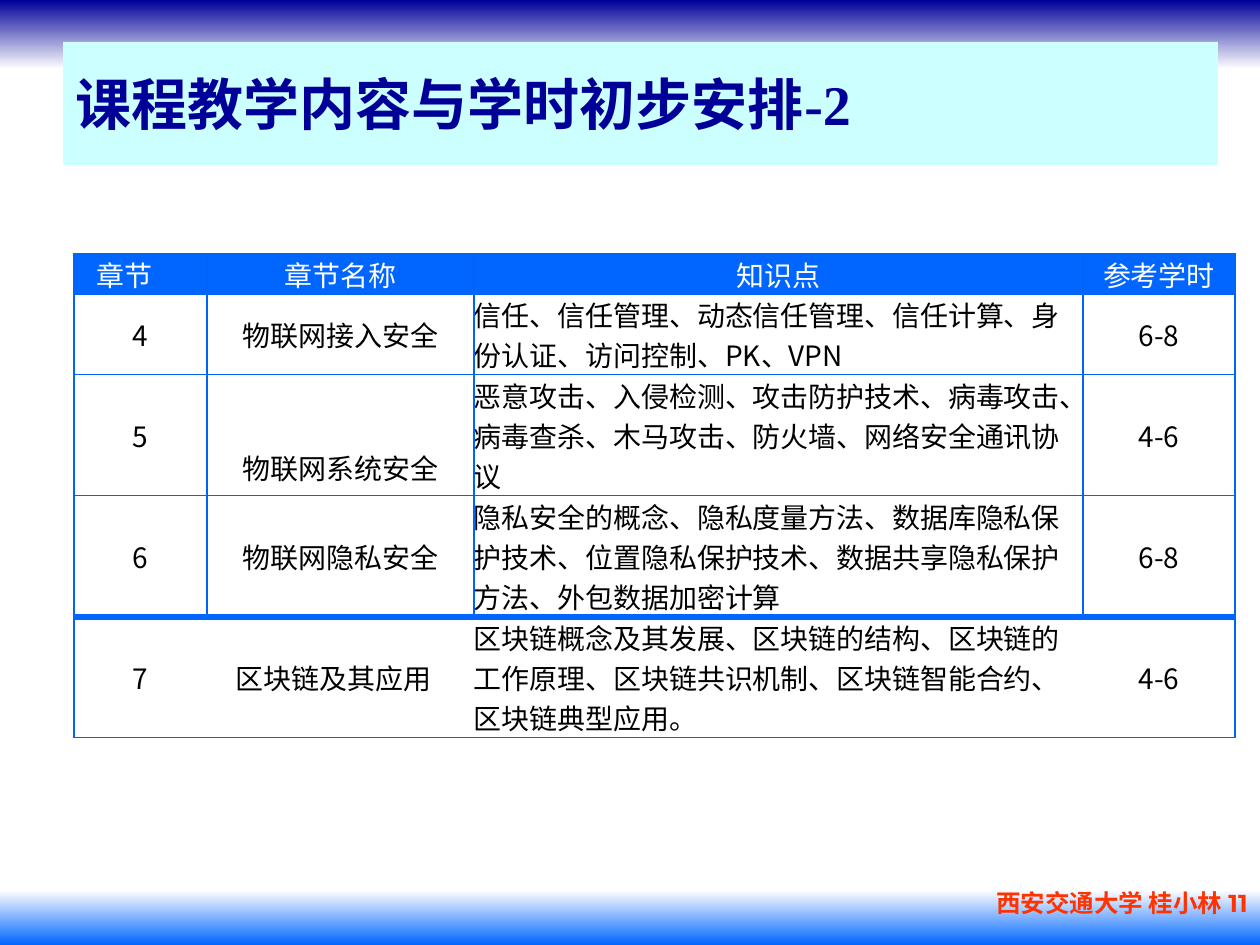
"""Build the course outline slide: title, chapter table and footer."""
from dataclasses import dataclass
from typing import NamedTuple

from lxml.etree import SubElement
from pptx import Presentation
from pptx.dml.color import RGBColor
from pptx.enum.shapes import MSO_SHAPE as Shape
from pptx.enum.text import MSO_ANCHOR as Anchor, PP_ALIGN as Align
from pptx.oxml.ns import qn
from pptx.util import Emu, Pt


@dataclass(frozen=True)
class Theme:
    navy: str = "000099"
    blue: str = "0066FF"
    rule: str = "0064F9"
    pale: str = "CCFFFF"
    white: str = "FFFFFF"
    black: str = "000000"
    orange: str = "FF3300"
    serif: str = "Times New Roman"
    sans: str = "Noto Sans CJK SC"
    footer_font: str = "Montserrat"
    title_size: int = 32
    cell_size: int = 16
    footer_size: int = 14
    thin: float = 0.75
    thick: float = 4


class Box(NamedTuple):
    x: int
    y: int
    w: int
    h: int


class Band(NamedTuple):
    box: Box
    start: str
    end: str


class Chapter(NamedTuple):
    number: str
    name: str
    topics: str
    hours: str


T = Theme()
BANDS = [
    Band(Box(0, 0, 1260, 69), T.navy, T.white),
    Band(Box(0, 890, 1260, 55), T.white, T.blue),
]
TITLE = Box(63, 42, 1155, 123)
FOOTER = Box(888, 882, 372, 63)
TABLE = Box(74, 254, 1161, 484)
COLS = [133, 267, 609, 152]
ROWS = [40, 81, 121, 121, 121]
CHAPTERS = [
    Chapter("章节", "章节名称", "知识点", "参考学时"),
    Chapter("4", "物联网接入安全", "信任、信任管理、动态信任管理、信任计算、身份认证、访问控制、PK、VPN", "6-8"),
    Chapter("5", "物联网系统安全",
            "恶意攻击、入侵检测、攻击防护技术、病毒攻击、病毒查杀、木马攻击、防火墙、网络安全通讯协议", "4-6"),
    Chapter("6", "物联网隐私安全",
            "隐私安全的概念、隐私度量方法、数据库隐私保护技术、位置隐私保护技术、数据共享隐私保护方法、外包数据加密计算",
            "6-8"),
    Chapter("7", "区块链及其应用",
            "区块链概念及其发展、区块链的结构、区块链的工作原理、区块链共识机制、区块链智能合约、区块链典型应用。",
            "4-6"),
]


def px(n: int) -> Emu:
    return Emu(round(n * 914400 / 126))


def place(box: Box) -> list[Emu]:
    return [px(n) for n in box]


def write(tf, text: str, *, size: int, color: str, font: str = T.sans,
          bold: bool = False, align: Align = Align.LEFT) -> None:
    tf.word_wrap = True
    p = tf.paragraphs[0]
    p.alignment = align
    r = p.add_run()
    r.text = text
    r.font.size, r.font.bold, r.font.name = Pt(size), bold, font
    r.font.color.rgb = RGBColor.from_string(color)
    SubElement(r.font._element, qn("a:ea"), typeface=T.sans)


def add_rect(s, box: Box):
    sp = s.shapes.add_shape(Shape.RECTANGLE, *place(box))
    sp.shadow.inherit = False
    sp.line.fill.background()
    return sp


def add_band(s, band: Band) -> None:
    fill = add_rect(s, band.box).fill
    fill.gradient()
    fill.gradient_angle = 270
    for stop, color in zip(fill.gradient_stops, (band.start, band.end)):
        stop.color.rgb = RGBColor.from_string(color)


def add_border(cell, side: str, color: str, width: float) -> None:
    ln = SubElement(cell._tc.get_or_add_tcPr(), qn(f"a:ln{side}"), w=str(Pt(width)))
    if width:
        SubElement(SubElement(ln, qn("a:solidFill")), qn("a:srgbClr"), val=color)
    else:
        SubElement(ln, qn("a:noFill"))


def format_cell(cell, row: int, col: int) -> None:
    last_row, last_col = len(ROWS) - 1, len(COLS) - 1
    final = row == last_row
    widths = {
        "L": 0 if final and col > 0 else T.thin,
        "R": 0 if final and col < last_col else T.thin,
        "T": T.thick if final else T.thin,
        "B": T.thick if row == last_row - 1 else T.thin,
    }
    for side, width in widths.items():
        add_border(cell, side, T.blue if width == T.thick else T.rule, width)
    if row == 0:
        cell.fill.solid()
        cell.fill.fore_color.rgb = RGBColor.from_string(T.blue)
    else:
        cell.fill.background()
    cell.margin_left = cell.margin_right = cell.margin_top = cell.margin_bottom = 0
    cell.vertical_anchor = Anchor.TOP if row == 0 else Anchor.MIDDLE


def add_chapters(s) -> None:
    table = s.shapes.add_table(len(ROWS), len(COLS), *place(TABLE)).table
    table.first_row = table.horz_banding = False
    for column, width in zip(table.columns, COLS):
        column.width = px(width)
    for i, (chapter, height) in enumerate(zip(CHAPTERS, ROWS)):
        table.rows[i].height = px(height)
        for j, text in enumerate(chapter):
            cell = table.cell(i, j)
            format_cell(cell, i, j)
            left = (i == 0 and j == 0) or (i > 0 and j == 2)
            write(cell.text_frame, text, size=T.cell_size,
                  color=T.black if i else T.white,
                  align=Align.LEFT if left else Align.CENTER)
    table.cell(0, 0).margin_left = px(23)
    system_name = table.cell(2, 1)
    system_name.vertical_anchor = Anchor.BOTTOM
    system_name.margin_bottom = px(8)
    table.cell(4, 1).margin_right = px(14)


def main() -> None:
    prs = Presentation()
    prs.slide_width, prs.slide_height = px(1260), px(945)
    s = prs.slides.add_slide(prs.slide_layouts[6])
    for band in BANDS:
        add_band(s, band)

    title = add_rect(s, TITLE)
    title.fill.solid()
    title.fill.fore_color.rgb = RGBColor.from_string(T.pale)
    title.text_frame.vertical_anchor = Anchor.MIDDLE
    write(title.text_frame, "课程教学内容与学时初步安排-2", size=T.title_size,
          color=T.navy, font=T.serif, bold=True)

    footer = s.shapes.add_textbox(*place(FOOTER))
    write(footer.text_frame, "西安交通大学 桂小林 11", size=T.footer_size,
          color=T.orange, font=T.footer_font, bold=True, align=Align.RIGHT)

    add_chapters(s)
    prs.save("out.pptx")


if __name__ == "__main__":
    main()
